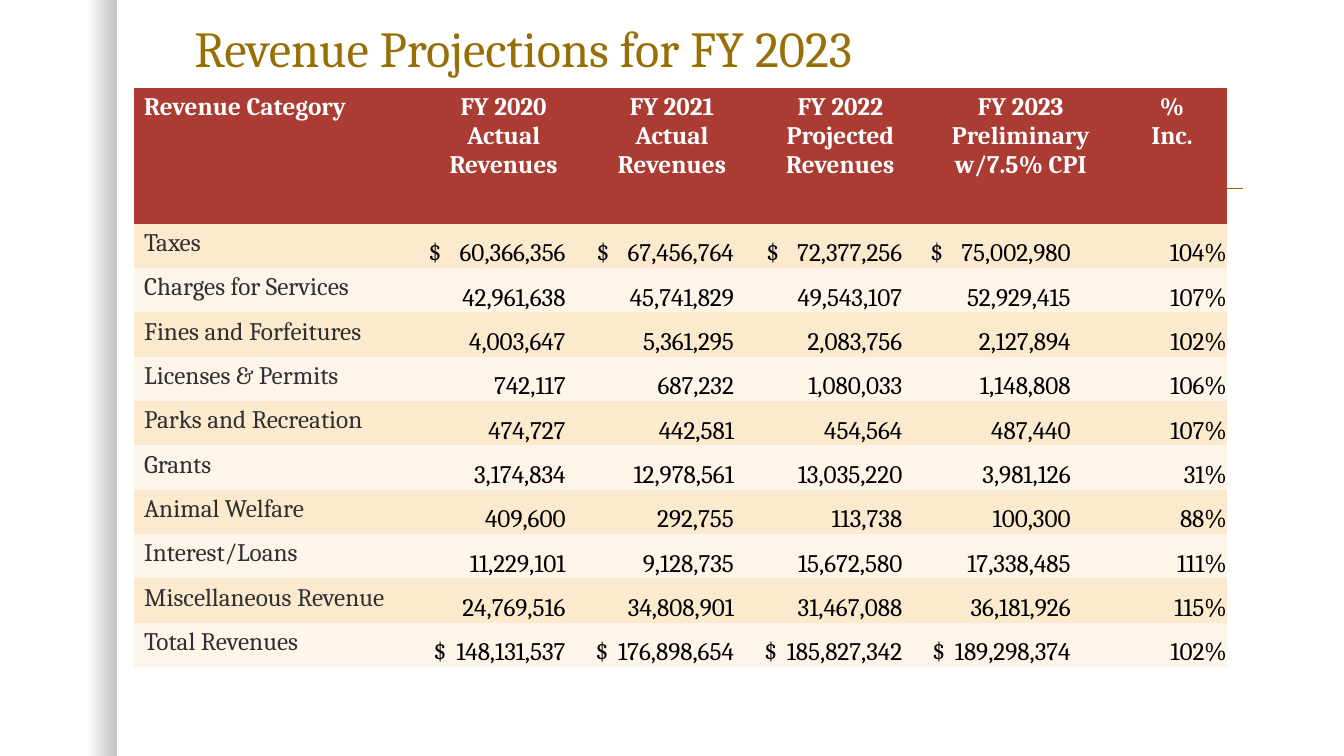
from lxml.etree import SubElement
from pptx import Presentation
from pptx.dml.color import RGBColor
from pptx.enum.shapes import MSO_CONNECTOR, MSO_SHAPE
from pptx.enum.text import MSO_ANCHOR, PP_ALIGN
from pptx.oxml.ns import qn
from pptx.util import Inches, Pt

FONT = "Cambria"
GOLD = RGBColor(0x98, 0x6F, 0x07)
RED = RGBColor(0xAB, 0x3C, 0x33)
SAND = RGBColor(0xFC, 0xEA, 0xCF)
CREAM = RGBColor(0xFD, 0xF5, 0xE9)
CHARCOAL = RGBColor(0x30, 0x30, 0x30)
BLACK = RGBColor(0, 0, 0)
WHITE = RGBColor(0xFF, 0xFF, 0xFF)
PLAIN_TABLE_STYLE = "{2D5ABB26-0587-4C30-8999-92F81FD0307C}"

COLUMN_WIDTHS = [2.83, 1.67, 1.67, 1.67, 1.91, 1.09]
HEADER_HEIGHT = 1.35
ROW_HEIGHT = 0.44
AMOUNT_RIGHT_EDGE = 1.45

HEADERS = [
    "Revenue Category",
    "FY 2020 Actual Revenues",
    "FY 2021 Actual Revenues",
    "FY 2022 Projected Revenues",
    "FY 2023 Preliminary w/7.5% CPI",
    "%\nInc.",
]
REVENUES = [
    ("Taxes", 60366356, 67456764, 72377256, 75002980, 104),
    ("Charges for Services", 42961638, 45741829, 49543107, 52929415, 107),
    ("Fines and Forfeitures", 4003647, 5361295, 2083756, 2127894, 102),
    ("Licenses & Permits", 742117, 687232, 1080033, 1148808, 106),
    ("Parks and Recreation", 474727, 442581, 454564, 487440, 107),
    ("Grants", 3174834, 12978561, 13035220, 3981126, 31),
    ("Animal Welfare", 409600, 292755, 113738, 100300, 88),
    ("Interest/Loans", 11229101, 9128735, 15672580, 17338485, 111),
    ("Miscellaneous Revenue", 24769516, 34808901, 31467088, 36181926, 115),
    ("Total Revenues", 148131537, 176898654, 185827342, 189298374, 102),
]
DOLLAR_GAPS = {"Taxes": 9, "Total Revenues": 3}


def style_paragraph(paragraph, size, color, bold=False, align=PP_ALIGN.LEFT):
    paragraph.alignment = align
    font = paragraph.font
    font.name = FONT
    font.size = Pt(size)
    font.bold = bold
    font.color.rgb = color


def add_edge_shadow(slide, left, top, width, height):
    shape = slide.shapes.add_shape(
        MSO_SHAPE.RECTANGLE, Inches(left), Inches(top), Inches(width), Inches(height))
    shape.shadow.inherit = False
    shape.line.fill.background()
    shape.fill.gradient()
    shape.fill.gradient_angle = 0
    for stop, position in zip(shape.fill.gradient_stops, (0.75, 1)):
        stop.position = position
        stop.color.rgb = BLACK
    for color, opacity in zip(shape.element.spPr.iter(qn("a:srgbClr")), (0, 25)):
        SubElement(color, qn("a:alpha")).set("val", str(opacity * 1000))


def add_rule(slide, left, top, width):
    rule = slide.shapes.add_connector(
        MSO_CONNECTOR.STRAIGHT, Inches(left), Inches(top), Inches(left + width), Inches(top))
    rule.line.color.rgb = GOLD
    rule.line.width = Pt(1)
    SubElement(rule.element.spPr, qn("a:effectLst"))


def add_title(slide, text, left, top, width, height):
    box = slide.shapes.add_textbox(Inches(left), Inches(top), Inches(width), Inches(height))
    frame = box.text_frame
    frame.word_wrap = True
    frame.vertical_anchor = MSO_ANCHOR.BOTTOM
    frame.text = text
    paragraph = frame.paragraphs[0]
    paragraph.line_spacing = 0.9
    style_paragraph(paragraph, 36, GOLD)


def fill_cell(cell, text, fill, color, bold=False, align=PP_ALIGN.LEFT):
    cell.fill.solid()
    cell.fill.fore_color.rgb = fill
    cell.text_frame.text = text
    for paragraph in cell.text_frame.paragraphs:
        style_paragraph(paragraph, 18, color, bold, align)


def fill_figure(cell, text, fill, right_margin=0):
    fill_cell(cell, text, fill, BLACK, align=PP_ALIGN.RIGHT)
    cell.vertical_anchor = MSO_ANCHOR.BOTTOM
    cell.margin_left = cell.margin_top = cell.margin_bottom = 0
    cell.margin_right = Inches(right_margin)


def fill_dollars(cell, amount, gap, fill, right_margin):
    fill_figure(cell, "$", fill, right_margin)
    paragraph = cell.text_frame.paragraphs[0]
    space = paragraph.add_run()
    space.text = " "
    space._r.get_or_add_rPr().set("spc", str(gap * 100))
    paragraph.add_run().text = amount


def add_revenue_table(slide, left, top):
    height = HEADER_HEIGHT + ROW_HEIGHT * len(REVENUES)
    graphic_frame = slide.shapes.add_table(
        len(REVENUES) + 1, len(HEADERS), Inches(left), Inches(top),
        Inches(sum(COLUMN_WIDTHS)), Inches(height))
    next(graphic_frame.element.iter(qn("a:tableStyleId"))).text = PLAIN_TABLE_STYLE
    table = graphic_frame.table
    for column, width in zip(table.columns, COLUMN_WIDTHS):
        column.width = Inches(width)
    for row in table.rows:
        row.height = Inches(ROW_HEIGHT)
    table.rows[0].height = Inches(HEADER_HEIGHT)

    for index, header in enumerate(HEADERS):
        align = PP_ALIGN.CENTER if index else PP_ALIGN.LEFT
        fill_cell(table.cell(0, index), header, RED, WHITE, True, align)

    for index, (category, *amounts, percent) in enumerate(REVENUES, start=1):
        fill = SAND if index % 2 else CREAM
        fill_cell(table.cell(index, 0), category, fill, CHARCOAL)
        for column, amount in enumerate(amounts, start=1):
            cell = table.cell(index, column)
            right_margin = COLUMN_WIDTHS[column] - AMOUNT_RIGHT_EDGE
            if category in DOLLAR_GAPS:
                fill_dollars(cell, f"{amount:,}", DOLLAR_GAPS[category], fill, right_margin)
            else:
                fill_figure(cell, f"{amount:,}", fill, right_margin)
        fill_figure(table.cell(index, len(HEADERS) - 1), f"{percent}%", fill)


def main():
    presentation = Presentation()
    presentation.slide_width = Inches(13.33)
    presentation.slide_height = Inches(7.5)
    slide = presentation.slides.add_slide(presentation.slide_layouts[6])
    add_edge_shadow(slide, 0, 0, 1.16, 7.5)
    add_rule(slide, 1.81, 1.87, 10.52)
    add_title(slide, "Revenue Projections for FY 2023", 1.83, 0.08, 10.75, 0.75)
    add_revenue_table(slide, 1.33, 0.87)
    presentation.save("out.pptx")


if __name__ == "__main__":
    main()
